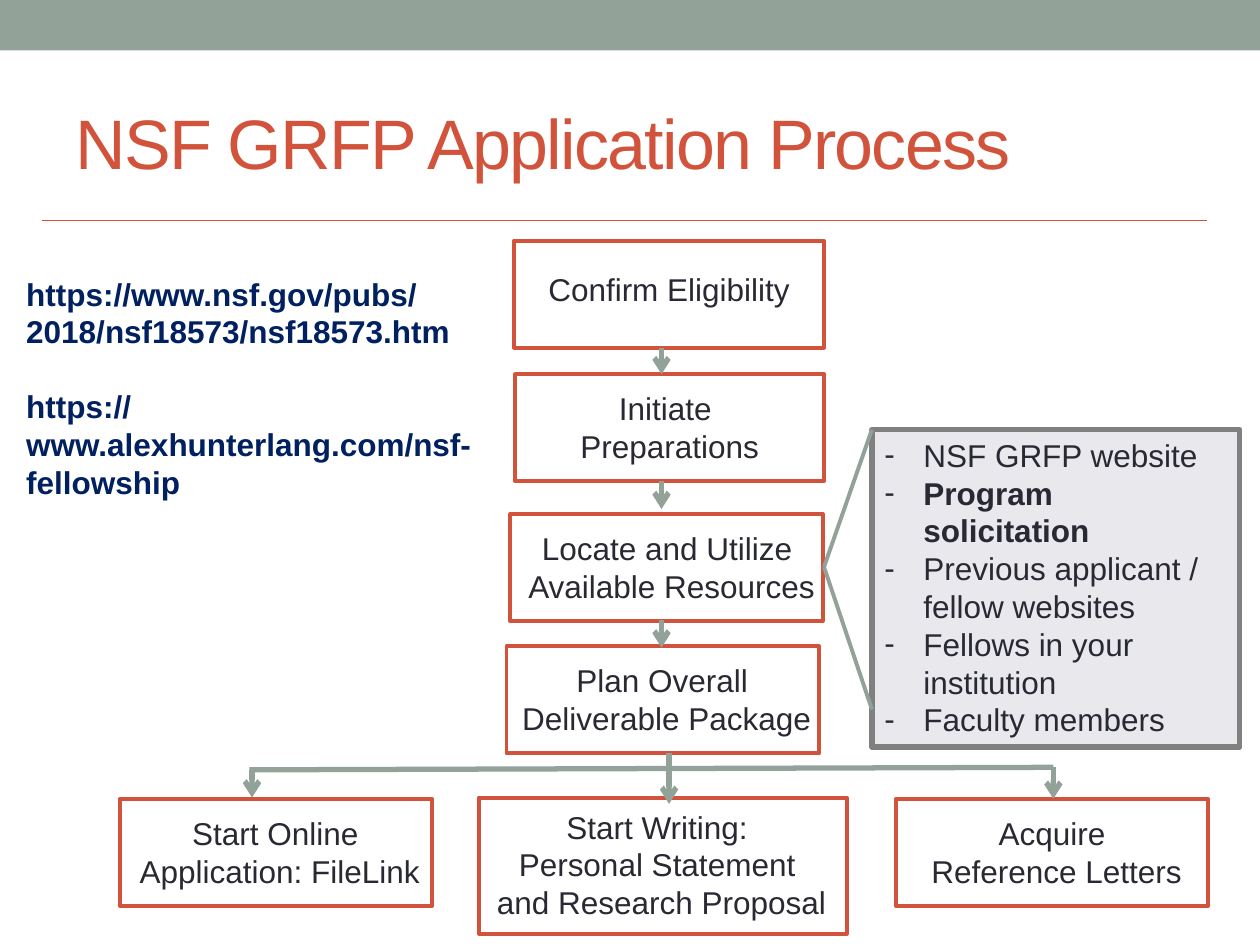
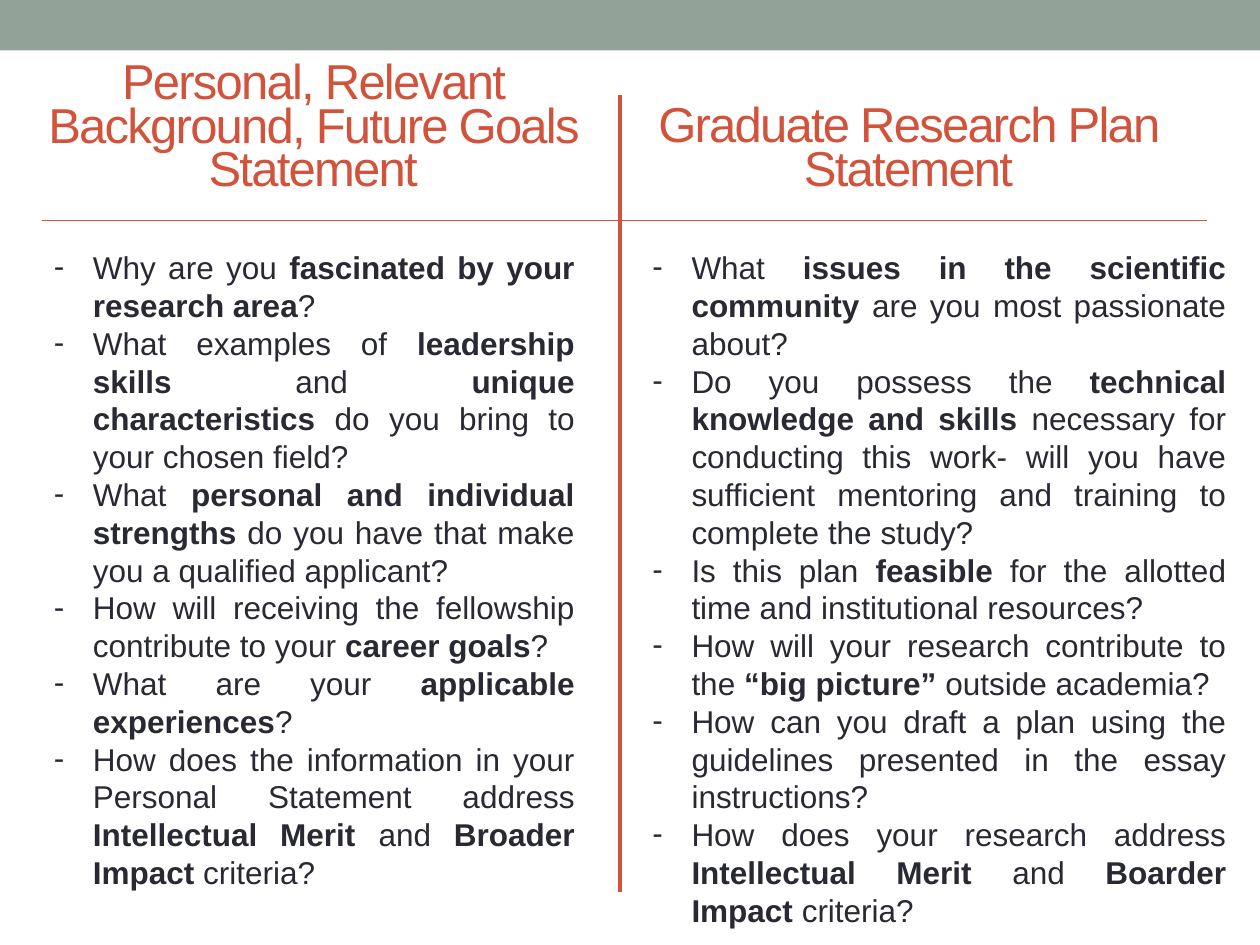
from dataclasses import dataclass

from lxml.etree import SubElement
from pptx import Presentation
from pptx.dml.color import RGBColor
from pptx.enum.shapes import MSO_CONNECTOR, MSO_SHAPE
from pptx.enum.text import MSO_ANCHOR, MSO_AUTO_SIZE, PP_ALIGN
from pptx.oxml.ns import qn
from pptx.util import Inches, Pt


@dataclass(frozen=True)
class Theme:
    font: str = "Arial"
    sage: RGBColor = RGBColor(0x93, 0xA2, 0x99)
    brick: RGBColor = RGBColor(0xD2, 0x53, 0x3C)
    ink: RGBColor = RGBColor(0x29, 0x29, 0x34)
    navy: RGBColor = RGBColor(0x00, 0x20, 0x60)
    panel: RGBColor = RGBColor(0xE8, 0xE8, 0xED)
    gray: RGBColor = RGBColor(0x80, 0x80, 0x80)
    title: int = 40
    column_title: int = 28
    body: int = 18
    thin: float = 0.75
    medium: float = 2.25
    thick: float = 3


@dataclass(frozen=True)
class Rect:
    left: float
    top: float
    width: float
    height: float

    def emu(self):
        return [Inches(v) for v in (self.left, self.top, self.width, self.height)]


@dataclass(frozen=True)
class Step:
    box: Rect
    label: Rect
    lines: tuple


@dataclass(frozen=True)
class Line:
    x1: float
    y1: float
    x2: float
    y2: float
    width: float = Theme.thick
    color: RGBColor = Theme.sage
    arrow: bool = False


@dataclass(frozen=True)
class Column:
    title: str
    title_box: Rect
    body_box: Rect
    questions: tuple


T = Theme()

STEPS = (
    Step(Rect(4.08, 1.91, 2.46, 0.85), Rect(4.24, 2.09, 2.14, 0.4),
         ("Confirm Eligibility",)),
    Step(Rect(4.09, 2.97, 2.45, 0.85), Rect(4.5, 3.04, 1.63, 0.71),
         ("Initiate ", "Preparations")),
    Step(Rect(4.05, 4.08, 2.48, 0.85), Rect(4.08, 4.15, 2.5, 0.71),
         ("Locate and Utilize ", "Available Resources")),
    Step(Rect(4.02, 5.13, 2.48, 0.85), Rect(4.03, 5.2, 2.52, 0.71),
         ("Plan Overall ", "Deliverable Package")),
    Step(Rect(0.95, 6.34, 2.48, 0.85), Rect(0.87, 6.41, 2.7, 0.71),
         ("Start Online ", "Application: FileLink")),
    Step(Rect(3.8, 6.33, 2.92, 1.08), Rect(3.83, 6.36, 2.84, 1.01),
         ("Start Writing: ", "Personal Statement ", "and Research Proposal")),
    Step(Rect(7.11, 6.34, 2.48, 0.85), Rect(7.28, 6.41, 2.21, 0.71),
         ("Acquire ", "Reference Letters")),
)

FLOW = (
    Line(5.25, 2.76, 5.25, 2.97, arrow=True),
    Line(5.25, 3.82, 5.25, 4.04, arrow=True),
    Line(5.25, 4.92, 5.25, 5.14, arrow=True),
    Line(5.31, 5.98, 5.31, 6.38, arrow=True),
    Line(2, 6.11, 2, 6.33, arrow=True),
    Line(8.36, 6.09, 8.36, 6.34, arrow=True),
    Line(1.98, 6.11, 8.36, 6.09),
)

CALLOUT = (
    Line(6.54, 4.5, 6.92, 3.41, T.medium),
    Line(6.54, 4.5, 6.92, 5.63, T.medium),
)

# Words between ** marks are bold.
RESOURCES = (
    "NSF GRFP website",
    "**Program solicitation**",
    "Previous applicant / fellow websites",
    "Fellows in your institution",
    "Faculty members",
)

LINKS = (
    "https://www.nsf.gov/pubs/2018/nsf18573/nsf18573.htm",
    "https://www.alexhunterlang.com/nsf-fellowship",
)

COLUMNS = (
    Column(
        "Personal, Relevant Background, Future Goals Statement",
        Rect(-0.12, 0.5, 5.21, 1.08), Rect(0.33, 1.92, 4.33, 5.55),
        (
            "Why are you **fascinated by your research area**?",
            "What examples of **leadership skills **and **unique characteristics "
            "**do you bring to your chosen field?",
            "What **personal and individual strengths **do you have that make "
            "you a qualified applicant?",
            "How will receiving the fellowship contribute to your **career goals**?",
            "What are your **applicable experiences**?",
            "How does the information in your Personal Statement address "
            "**Intellectual Merit **and **Broader Impact** criteria?",
        ),
    ),
    Column(
        "Graduate Research Plan Statement",
        Rect(4.92, 0.67, 4.58, 1.08), Rect(5.08, 1.92, 4.75, 5.55),
        (
            "What **issues in the scientific community **are you most "
            "passionate about?",
            "Do you possess the **technical knowledge and skills **necessary for "
            "conducting this work- will you have sufficient mentoring and "
            "training to complete the study?",
            "Is this plan **feasible** for the allotted time and institutional "
            "resources?",
            "How will your research contribute to the **“big picture” **outside "
            "academia?",
            "How can you draft a plan using the guidelines presented in the "
            "essay instructions?",
            "How does your research address **Intellectual Merit **and "
            "**Boarder Impact **criteria?",
        ),
    ),
)


def style_font(font, size: float, color: RGBColor, bold: bool = False) -> None:
    font.name, font.size, font.bold = T.font, Pt(size), bold
    font.color.rgb = color


def add_rect(s, rect: Rect, fill=None, line=None, width: float = T.medium):
    sp = s.shapes.add_shape(MSO_SHAPE.RECTANGLE, *rect.emu())
    sp.shadow.inherit = False
    if fill is None:
        sp.fill.background()
    else:
        sp.fill.solid()
        sp.fill.fore_color.rgb = fill
    if line is None:
        sp.line.fill.background()
    else:
        sp.line.color.rgb = line
        sp.line.width = Pt(width)
    return sp


def add_line(s, line: Line) -> None:
    ends = [Inches(v) for v in (line.x1, line.y1, line.x2, line.y2)]
    cx = s.shapes.add_connector(MSO_CONNECTOR.STRAIGHT, *ends)
    cx.line.color.rgb = line.color
    cx.line.width = Pt(line.width)
    spPr = cx._element.spPr
    if line.arrow:
        SubElement(spPr.find(qn("a:ln")), qn("a:tailEnd"), type="arrow")
    SubElement(spPr, qn("a:effectLst"))


def add_text(s, rect: Rect, lines: tuple, size: float, color: RGBColor,
             align=PP_ALIGN.LEFT, bold: bool = False, wrap: bool = True):
    tf = s.shapes.add_textbox(*rect.emu()).text_frame
    tf.word_wrap = wrap
    tf.auto_size = MSO_AUTO_SIZE.SHAPE_TO_FIT_TEXT
    tf.text = "\n".join(lines)
    for p in tf.paragraphs:
        p.alignment = align
        for r in p.runs:
            style_font(r.font, size, color, bold)
    return tf


def add_title(s, rect: Rect, text: str, size: float, align=PP_ALIGN.LEFT,
              leading=None) -> None:
    tf = add_text(s, rect, (text,), size, T.brick, align)
    tf.auto_size = MSO_AUTO_SIZE.NONE
    tf.vertical_anchor = MSO_ANCHOR.MIDDLE
    p = tf.paragraphs[0]
    p.line_spacing = leading
    p.runs[0]._r.get_or_add_rPr().set("spc", "-100")


def fill_bullets(tf, items: tuple, align) -> None:
    """Write dash bullets, with the words between ** marks in bold."""
    tf.word_wrap = True
    tf.auto_size = MSO_AUTO_SIZE.SHAPE_TO_FIT_TEXT
    for i, item in enumerate(items):
        p = tf.add_paragraph() if i else tf.paragraphs[0]
        p.alignment = align
        pPr = p._p.get_or_add_pPr()
        indent = Inches(0.31)
        pPr.set("marL", str(indent))
        pPr.set("indent", str(-indent))
        SubElement(pPr, qn("a:buFont"), typeface=T.font)
        SubElement(pPr, qn("a:buChar"), char="-")
        for j, part in enumerate(item.split("**")):
            if part:
                r = p.add_run()
                r.text = part
                style_font(r.font, T.body, T.ink, bold=j % 2 == 1)


def new_slide(prs):
    """Add a blank slide with the top band and the rule under the title."""
    s = prs.slides.add_slide(prs.slide_layouts[6])
    add_rect(s, Rect(0, 0, 10, 0.4), fill=T.sage)
    add_line(s, Line(0.33, 1.75, 9.58, 1.75, T.thin, T.brick))
    return s


def build_process(prs) -> None:
    s = new_slide(prs)
    add_title(s, Rect(0.5, 0.58, 9, 1.08), "NSF GRFP Application Process", T.title)
    for step in STEPS:
        add_rect(s, step.box, line=T.brick)
        add_text(s, step.label, step.lines, T.body, T.ink, PP_ALIGN.CENTER,
                 wrap=False)
    for line in FLOW:
        add_line(s, line)
    panel = add_rect(s, Rect(6.92, 3.41, 2.92, 2.52), T.panel, T.gray, T.thick)
    panel.text_frame.vertical_anchor = MSO_ANCHOR.TOP
    fill_bullets(panel.text_frame, RESOURCES, PP_ALIGN.LEFT)
    for line in CALLOUT:
        add_line(s, line)
    tf = add_text(s, Rect(0.11, 2.13, 3.86, 1.62), LINKS, T.body, T.navy, bold=True)
    tf.paragraphs[1].space_before = Pt(21)


def build_statements(prs) -> None:
    s = new_slide(prs)
    add_line(s, Line(4.92, 0.75, 4.92, 7.08, T.medium, T.brick))
    for col in COLUMNS:
        add_title(s, col.title_box, col.title, T.column_title, PP_ALIGN.CENTER,
                  Pt(25))
        body = s.shapes.add_textbox(*col.body_box.emu())
        fill_bullets(body.text_frame, col.questions, PP_ALIGN.JUSTIFY)


def main() -> None:
    prs = Presentation()
    prs.slide_width, prs.slide_height = Inches(10), Inches(7.5)
    build_process(prs)
    build_statements(prs)
    prs.save("out.pptx")


if __name__ == "__main__":
    main()
